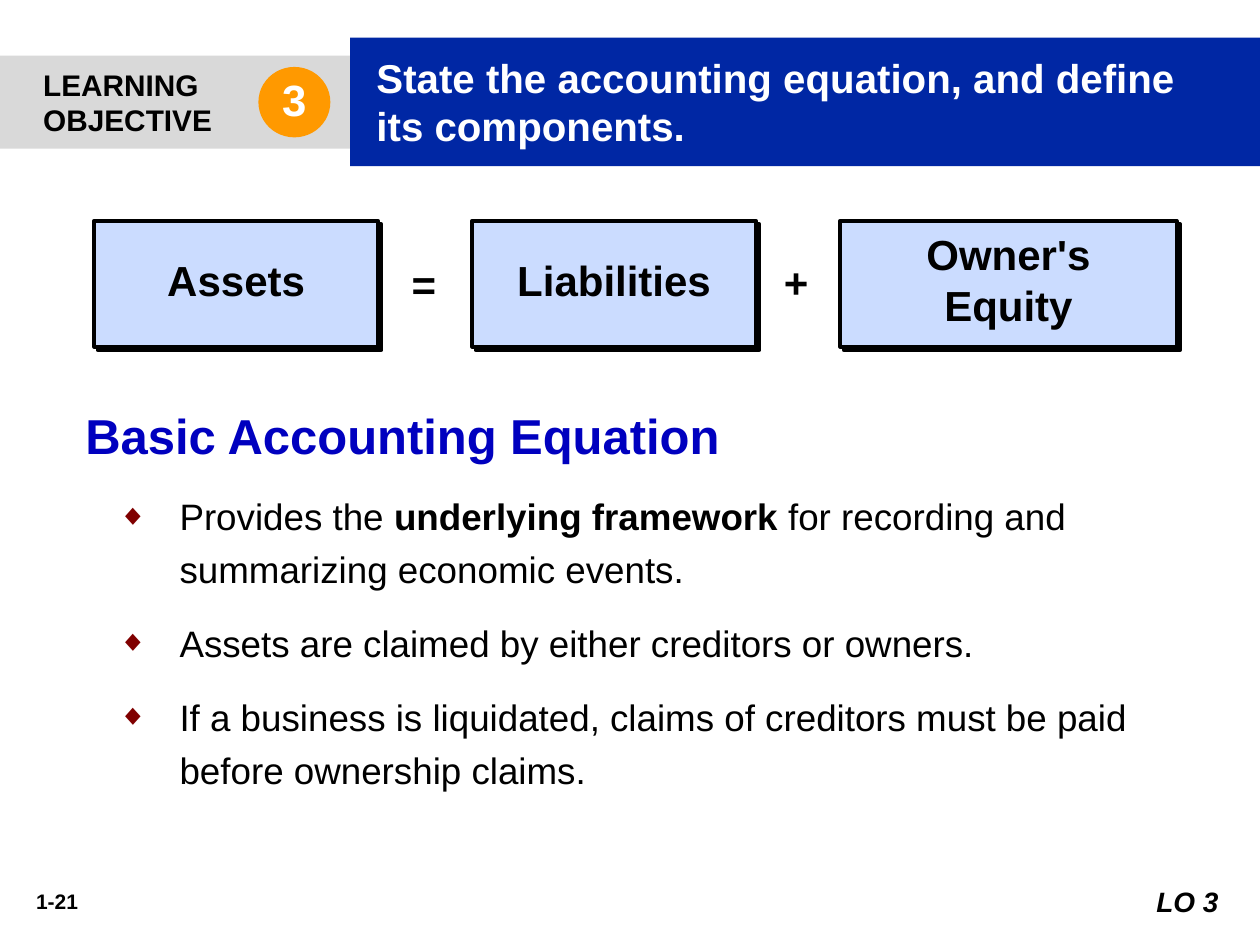
from lxml import etree
from pptx import Presentation
from pptx.dml.color import RGBColor
from pptx.enum.shapes import MSO_SHAPE
from pptx.enum.text import MSO_ANCHOR, PP_ALIGN
from pptx.oxml.ns import qn
from pptx.util import Cm, Pt

RECTANGLE, OVAL = MSO_SHAPE.RECTANGLE, MSO_SHAPE.OVAL
LEFT, CENTER, RIGHT = PP_ALIGN.LEFT, PP_ALIGN.CENTER, PP_ALIGN.RIGHT
TOP, MIDDLE = MSO_ANCHOR.TOP, MSO_ANCHOR.MIDDLE

BLACK = RGBColor(0x00, 0x00, 0x00)
WHITE = RGBColor(0xFF, 0xFF, 0xFF)
GREY = RGBColor(0xD9, 0xD9, 0xD9)
NAVY = RGBColor(0x00, 0x27, 0xA4)
ORANGE = RGBColor(0xFF, 0x99, 0x00)
PALE_BLUE = RGBColor(0xCB, 0xDC, 0xFF)
HEADING_BLUE = RGBColor(0x00, 0x00, 0xBF)
MAROON = RGBColor(0x80, 0x00, 0x00)

FONT = "Arial"
INSETS = (0.25, 0.13, 0.25, 0.13)
TERM_INSETS = (0.51, 0, 0.51, 0.18)

# Name, left and width in cm
TERMS = [("Assets", 1.9, 5.72), ("Liabilities", 9.52, 5.72), ("Owner's Equity", 16.94, 6.78)]
TERM_TOP, TERM_HEIGHT = 4.45, 2.54
# Sign, left, top and alignment
SIGNS = [("=", 8.05, 5.08, LEFT), ("+", 15.44, 5.05, CENTER)]

# Each point is a list of (text, bold) spans
POINTS = [
    [("Provides the ", False), ("underlying framework", True),
     (" for recording and summarizing economic events.", False)],
    [("Assets are claimed by either creditors or owners.", False)],
    [("If a business is liquidated, claims of creditors must be paid before ownership claims.", False)],
]


def indent(para, margin, first=0):
    properties = para._p.get_or_add_pPr()
    properties.set("marL", str(Cm(margin)))
    properties.set("indent", str(Cm(first)))


def set_frame(box, anchor, insets):
    frame = box.text_frame
    frame.word_wrap = True
    frame.vertical_anchor = anchor
    (frame.margin_left, frame.margin_top,
     frame.margin_right, frame.margin_bottom) = [Cm(inset) for inset in insets]
    return frame


def set_font(para, size, color=BLACK, bold=True):
    para.font.name = FONT
    para.font.size = Pt(size)
    para.font.bold = bold
    para.font.color.rgb = color


def write(box, lines, size, color=BLACK, align=LEFT, anchor=TOP, insets=INSETS, margin=0):
    frame = set_frame(box, anchor, insets)
    for number, line in enumerate(lines):
        para = frame.add_paragraph() if number else frame.paragraphs[0]
        para.text = line
        para.alignment = align
        indent(para, margin)
        set_font(para, size, color)
    return frame


def add_text_box(page, place):
    return page.shapes.add_textbox(*[Cm(length) for length in place])


def add_filled(page, kind, place, fill):
    shape = page.shapes.add_shape(kind, *[Cm(length) for length in place])
    shape.shadow.inherit = False
    shape.fill.solid()
    shape.fill.fore_color.rgb = fill
    shape.line.fill.background()
    return shape


def add_hard_shadow(shape):
    effects = shape._element.spPr.find(qn("a:effectLst"))
    shadow = etree.SubElement(effects, qn("a:outerShdw"), blurRad="0", dist=str(Pt(2.8)),
                              dir=str(45 * 60000), algn="ctr", rotWithShape="0")
    etree.SubElement(shadow, qn("a:srgbClr"), val=str(BLACK))


def add_bullet(para):
    properties = para._p.get_or_add_pPr()
    color = etree.SubElement(properties, qn("a:buClr"))
    etree.SubElement(color, qn("a:srgbClr"), val=str(MAROON))
    etree.SubElement(properties, qn("a:buSzPct"), val="80000")
    etree.SubElement(properties, qn("a:buFont"), typeface=FONT)
    etree.SubElement(properties, qn("a:buChar"), char="◆")


def add_header(page):
    label = add_filled(page, RECTANGLE, (0, 1.12, 7.06, 1.88), GREY)
    write(label, ["LEARNING", "OBJECTIVE"], 17, anchor=MIDDLE,
          insets=(0.23, 0.13, 0.23, 0.13), margin=0.64)
    title = add_filled(page, RECTANGLE, (7.06, 0.76, 18.34, 2.59), NAVY)
    write(title, ["State the accounting equation, and define its components."], 23, WHITE,
          anchor=MIDDLE, insets=(0.23, 0.1, 1.02, 0.13), margin=0.3)
    badge = add_filled(page, OVAL, (5.21, 1.35, 1.45, 1.42), ORANGE)
    write(badge, ["3"], 25, WHITE, CENTER, MIDDLE, (0.23, 0, 0.23, 0.13))


def add_equation(page):
    for name, left, width in TERMS:
        term = add_filled(page, RECTANGLE, (left, TERM_TOP, width, TERM_HEIGHT), PALE_BLUE)
        term.line.color.rgb = BLACK
        term.line.width = Pt(2.25)
        add_hard_shadow(term)
        write(term, [name], 24, align=CENTER, anchor=MIDDLE, insets=TERM_INSETS)
    for sign, left, top, align in SIGNS:
        write(add_text_box(page, (left, top, 1.22, 1.27)), [sign], 24, align=align)


def add_points(page):
    frame = set_frame(add_text_box(page, (1.47, 9.65, 22.86, 6.5)), TOP, INSETS)
    for number, spans in enumerate(POINTS):
        para = frame.add_paragraph() if number else frame.paragraphs[0]
        para.line_spacing = 1.2
        para.space_before = Pt(12)
        indent(para, 1.9, -1.24)
        add_bullet(para)
        set_font(para, 21, bold=False)
        for text, bold in spans:
            span = para.add_run()
            span.text = text
            if bold:
                span.font.bold = True


def main():
    deck = Presentation()
    deck.slide_width, deck.slide_height = Cm(25.4), Cm(19.05)
    page = deck.slides.add_slide(deck.slide_layouts[6])

    add_header(page)
    add_equation(page)
    heading = add_text_box(page, (1.47, 8.05, 21.59, 1.4))
    write(heading, ["Basic Accounting Equation"], 28, HEADING_BLUE)
    add_points(page)

    write(add_text_box(page, (0.2, 17.78, 1.9, 0.76)), ["1-21"], 12, align=CENTER)
    objective = add_filled(page, RECTANGLE, (22.86, 17.7, 2.11, 0.94), WHITE)
    frame = write(objective, ["LO 3 "], 16, align=RIGHT)
    frame.paragraphs[0].font.italic = True

    deck.save("out.pptx")


if __name__ == "__main__":
    main()
